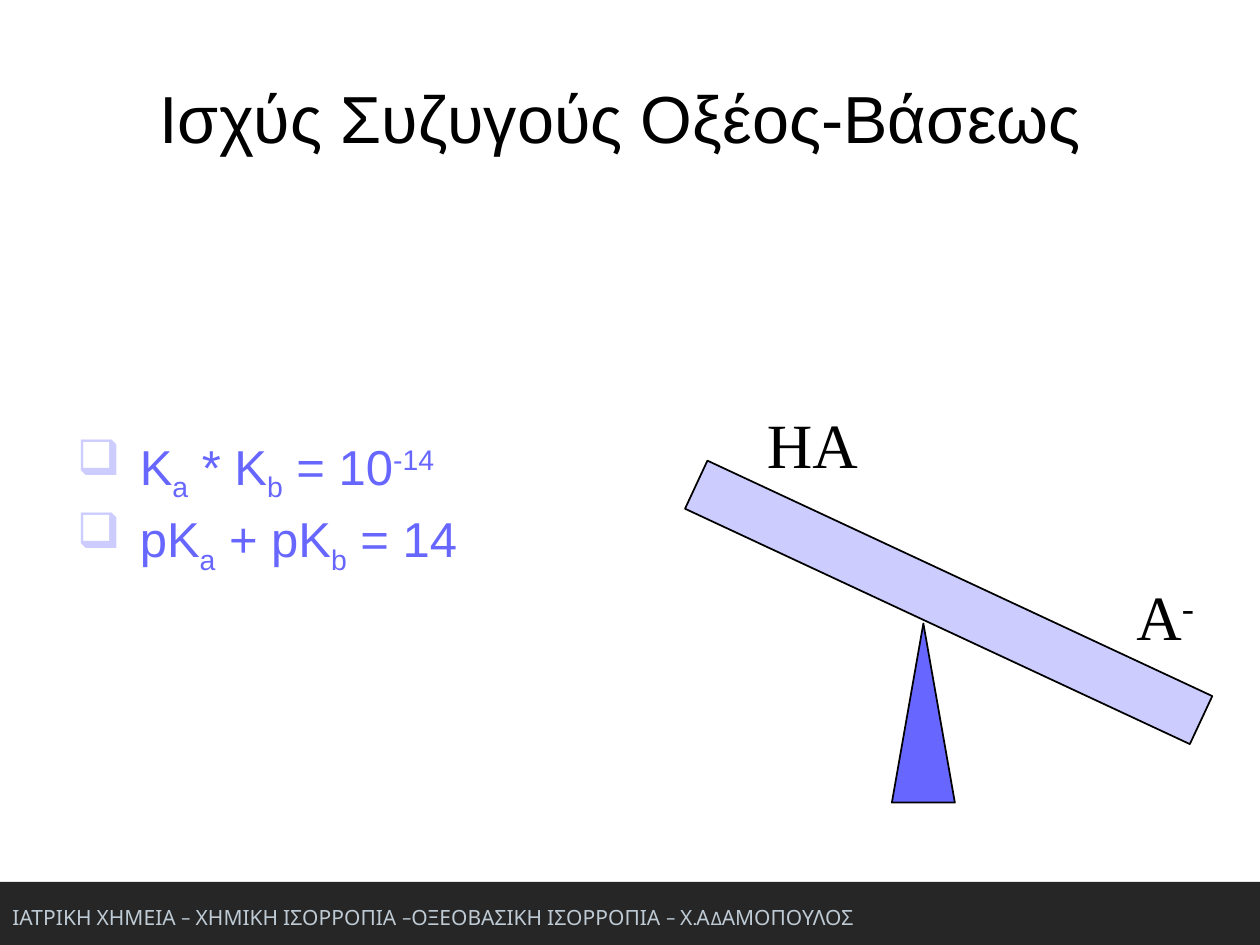
"""Build the slide on the strength of conjugate acids and bases."""
from lxml import etree
from pptx import Presentation, util as u
from pptx.dml.color import RGBColor
from pptx.enum import shapes, text
from pptx.oxml import ns

BLACK, LILAC, VIOLET, DARK, GREY = "000000", "CCCCFF", "6767FF", "262626", "BECAD4"
SUB, SUPER = -25, 30

TITLE = [[("Ισχύς Συζυγούς Οξέος-Βάσεως ", 0)]]
FOOTER = [[("ΙΑΤΡΙΚΗ ΧΗΜΕΙΑ – ΧΗΜΙΚΗ ΙΣΟΡΡΟΠΙΑ –ΟΞΕΟΒΑΣΙΚΗ ΙΣΟΡΡΟΠΙΑ – Χ.ΑΔΑΜΟΠΟΥΛΟΣ", 0)]]
EQUATIONS = [
    [("K", 0), ("a", SUB), (" * K", 0), ("b", SUB), (" = 10", 0), ("-14", SUPER)],
    [("pK", 0), ("a", SUB), (" + pK", 0), ("b", SUB), (" = 14", 0)],
]
SEESAW_LABELS = [
    ([[("HA", 0)]], (15.21, 8.05, 2.34, 1.78)),
    ([[("A", 0), ("-", SUPER)]], (22.66, 11.51, 1.68, 1.78)),
]
SEESAW_PARTS = [
    (shapes.MSO_SHAPE.RECTANGLE, (13.51, 11.61, 11.23, 1.07), LILAC, 25),
    (shapes.MSO_SHAPE.ISOSCELES_TRIANGLE, (17.98, 12.57, 1.27, 3.61), VIOLET, 0),
]


def color(value):
    return RGBColor.from_string(value)


def add_bullet(paragraph, character, fill):
    properties = paragraph._p.get_or_add_pPr()
    properties.set("marL", str(u.Cm(1.3)))
    properties.set("indent", str(u.Cm(-1.27)))
    bullet_color = etree.SubElement(properties, ns.qn("a:buClr"))
    etree.SubElement(bullet_color, ns.qn("a:srgbClr")).set("val", fill)
    etree.SubElement(properties, ns.qn("a:buChar")).set("char", character)


def add_text(slide, paragraphs, box, *, size, font, fill, wrap=True, align=None,
             anchor=text.MSO_ANCHOR.TOP, line_spacing=None, gap=0, bullet=None):
    frame = slide.shapes.add_textbox(*map(u.Cm, box)).text_frame
    frame.word_wrap = wrap
    frame.vertical_anchor = anchor
    for index, runs in enumerate(paragraphs):
        paragraph = frame.add_paragraph() if index else frame.paragraphs[0]
        paragraph.alignment = align
        paragraph.line_spacing = line_spacing
        paragraph.space_before = u.Pt(gap if index else 0)
        if bullet:
            add_bullet(paragraph, bullet, LILAC)
        for content, baseline in runs:
            run = paragraph.add_run()
            run.text = content
            run.font.size = u.Pt(size)
            run.font.name = font
            run.font.color.rgb = color(fill)
            if baseline:
                run.font._element.set("baseline", str(baseline * 1000))


def add_shape(slide, kind, box, fill, rotation=0, line=None):
    shape = slide.shapes.add_shape(kind, *map(u.Cm, box))
    shape.shadow.inherit = False
    shape.rotation = rotation
    shape.fill.solid()
    shape.fill.fore_color.rgb = color(fill)
    if line:
        shape.line.color.rgb = color(line)
        shape.line.width = u.Pt(1)
    else:
        shape.line.fill.background()


def main():
    presentation = Presentation()
    presentation.slide_width, presentation.slide_height = u.Cm(25.4), u.Cm(19.05)
    slide = presentation.slides.add_slide(presentation.slide_layouts[6])

    add_shape(slide, shapes.MSO_SHAPE.RECTANGLE, (0, 17.78, 25.4, 1.27), DARK)
    add_text(slide, FOOTER, (0, 18.11, 20.29, 0.76), size=12, font="Karla", fill=GREY)
    add_text(slide, EQUATIONS, (1.27, 8.69, 11.2, 3.2), size=28, font="Arial",
             fill=VIOLET, line_spacing=0.9, gap=7, bullet="❑")
    for kind, box, fill, rotation in SEESAW_PARTS:
        add_shape(slide, kind, box, fill, rotation, line=BLACK)
    for label, box in SEESAW_LABELS:
        add_text(slide, label, box, size=36, font="Times New Roman", fill=BLACK, wrap=False)
    add_text(slide, TITLE, (1.27, 0.76, 22.86, 3.18), size=38, font="Arial", fill=BLACK,
             align=text.PP_ALIGN.CENTER, anchor=text.MSO_ANCHOR.MIDDLE)

    presentation.save("out.pptx")


if __name__ == "__main__":
    main()
